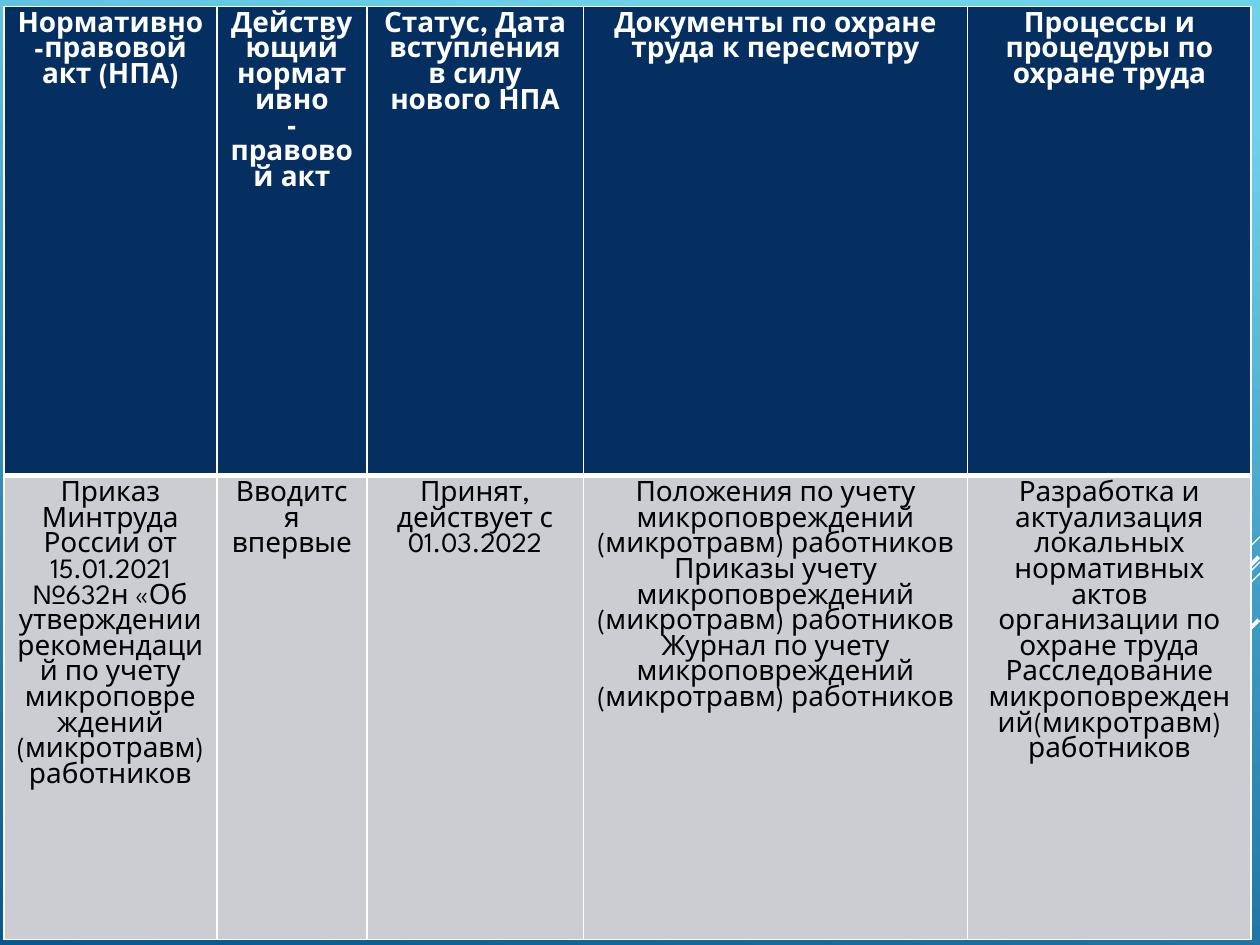
from lxml import etree
from pptx import Presentation
from pptx.dml.color import RGBColor
from pptx.enum.shapes import MSO_CONNECTOR
from pptx.enum.text import PP_ALIGN
from pptx.oxml.ns import qn
from pptx.util import Pt

LINE = MSO_CONNECTOR.STRAIGHT
CENTER = PP_ALIGN.CENTER
FONT = "League Spartan"
WHITE, BLACK, NAVY, GRAY = "FFFFFF", "000000", "052F61", "CCCDD2"
COLS = [121.7, 85.7, 123.8, 219.6, 162]
ROWS = [268.2, 265]
HEAD = [
    "Нормативно-правовой акт (НПА)",
    "Действующий нормативно\n- правовой акт",
    "Статус, Дата вступления в силу\nнового НПА",
    "Документы по охране труда к пересмотру",
    "Процессы и процедуры по охране труда",
]
BODY = [
    "Приказ Минтруда России от 15.01.2021 №632н «Об\n"
    "утверждении рекомендаций по учету микроповреждений (микротравм) работников",
    "Вводится впервые",
    "Принят, действует с 01.03.2022",
    "Положения по учету микроповреждений (микротравм) работников\n"
    "Приказы учету микроповреждений (микротравм) работников\n"
    "Журнал по учету микроповреждений (микротравм) работников",
    "Разработка и актуализация локальных нормативных актов организации по охране труда\n"
    "Расследование микроповреждений(микротравм) работников",
]
RAYS = [
    (720, 306.7, 59.8, 0.75),
    (720, 321.1, 194.4, 0.75),
    (720, 327.6, 123.8, 0.75),
    (719.3, 318.2, 113, 2.25),
    (719.3, 354.2, 82.1, 2.25),
]


def color(code):
    """Turn a hex string into a colour."""
    return RGBColor.from_string(code)


def paint_back(slide):
    """Fill the slide background with a blue gradient."""
    fill = slide.background.fill
    fill.gradient()
    fill.gradient_angle = 258
    for stop, (pos, code) in zip(fill.gradient_stops, [(0.1, "6ED2EB"), (1, "06588E")]):
        stop.position = pos
        stop.color.rgb = color(code)


def add_ray(slide, x, y, run, width):
    """Draw a white diagonal from its upper right end."""
    ray = slide.shapes.add_connector(LINE, Pt(x), Pt(y), Pt(x - run), Pt(y + run))
    ray.line.color.rgb = color(WHITE)
    ray.line.width = Pt(width)
    etree.SubElement(ray._element.spPr, qn("a:effectLst"))


def add_edges(cell, top, base):
    """Give a cell white borders, ahead of its fill."""
    props = cell._tc.get_or_add_tcPr()
    for i, (side, width) in enumerate([("L", 1), ("R", 1), ("T", top), ("B", base)]):
        edge = etree.Element(qn("a:ln" + side), w=str(Pt(width)))
        fill = etree.SubElement(edge, qn("a:solidFill"))
        etree.SubElement(fill, qn("a:srgbClr"), val=WHITE)
        props.insert(i, edge)


def fill_cell(cell, text, back, ink, bold):
    """Write centred text in a coloured cell."""
    cell.fill.solid()
    cell.fill.fore_color.rgb = color(back)
    cell.margin_left = cell.margin_right = Pt(7.2)
    cell.margin_top = cell.margin_bottom = Pt(3.6)
    cell.text_frame.text = text
    for para in cell.text_frame.paragraphs:
        para.alignment = CENTER
        for run in para.runs:
            font = run.font
            font.name, font.size, font.bold = FONT, Pt(16), bold
            font.color.rgb = color(ink)


def add_grid(slide):
    """Add the table with its header and body rows."""
    frame = slide.shapes.add_table(
        2, len(COLS), Pt(2.2), Pt(3.6), Pt(sum(COLS)), Pt(sum(ROWS)))
    table = frame.table
    for col, width in zip(table.columns, COLS):
        col.width = Pt(width)
    for row, height in zip(table.rows, ROWS):
        row.height = Pt(height)
    styles = [(HEAD, NAVY, WHITE, True, 1, 3), (BODY, GRAY, BLACK, False, 3, 1)]
    for row, (texts, back, ink, bold, top, base) in zip(table.rows, styles):
        for cell, text in zip(row.cells, texts):
            fill_cell(cell, text, back, ink, bold)
            add_edges(cell, top, base)


def main():
    """Build and save the slide."""
    deck = Presentation()
    deck.slide_width, deck.slide_height = Pt(720), Pt(540)
    slide = deck.slides.add_slide(deck.slide_layouts[6])
    paint_back(slide)
    for ray in RAYS:
        add_ray(slide, *ray)
    add_grid(slide)
    deck.save("out.pptx")


if __name__ == "__main__":
    main()
